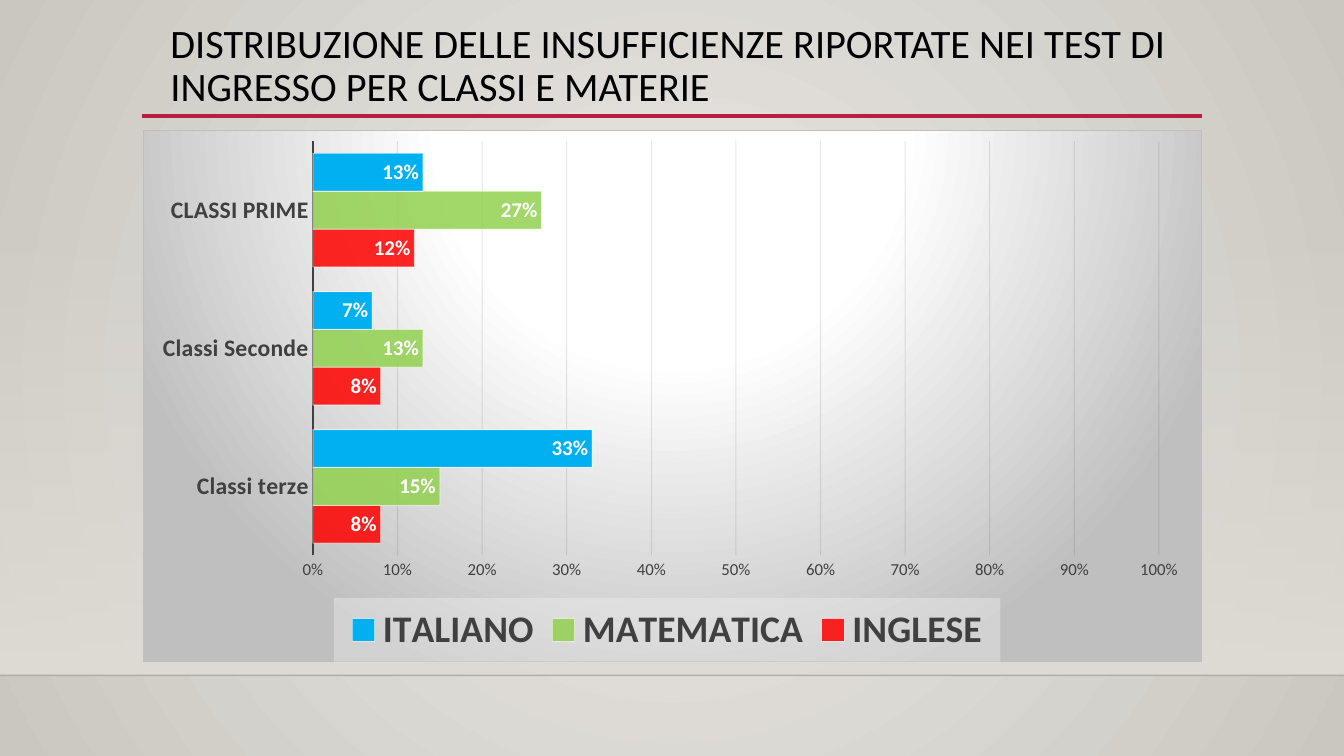
from lxml import etree
from pptx import Presentation
from pptx.chart.data import CategoryChartData
from pptx.dml.color import RGBColor
from pptx.enum.chart import (XL_CHART_TYPE, XL_LABEL_POSITION,
                             XL_LEGEND_POSITION, XL_TICK_MARK)
from pptx.enum.shapes import MSO_CONNECTOR, MSO_SHAPE
from pptx.enum.text import MSO_ANCHOR, MSO_AUTO_SIZE, PP_ALIGN
from pptx.oxml import parse_xml
from pptx.oxml.ns import nsdecls, qn
from pptx.util import Inches, Pt

BAR_CLUSTERED = XL_CHART_TYPE.BAR_CLUSTERED
INSIDE_END = XL_LABEL_POSITION.INSIDE_END
LEGEND_BOTTOM = XL_LEGEND_POSITION.BOTTOM
NO_TICK = XL_TICK_MARK.NONE

BLACK = RGBColor(0x00, 0x00, 0x00)
WHITE = RGBColor(0xFF, 0xFF, 0xFF)
CRIMSON = RGBColor(0xB7, 0x1E, 0x42)
DARK_GRAY = RGBColor(0x40, 0x40, 0x40)
GRID = RGBColor(0x0D, 0x0D, 0x0D)
SILVER = RGBColor(0xBF, 0xBF, 0xBF)
PALE_GRAY = RGBColor(0xF2, 0xF2, 0xF2)
BG_LIGHT = RGBColor(0xEC, 0xEA, 0xE7)
BG_DARK = RGBColor(0xCA, 0xC7, 0xC1)
SAND = RGBColor(0xDF, 0xDB, 0xD5)
RED = RGBColor(0xFF, 0x00, 0x00)
GREEN = RGBColor(0x92, 0xD0, 0x50)
BLUE = RGBColor(0x00, 0xB0, 0xF0)

FONT = "Calibri"
TITLE = ("DISTRIBUZIONE DELLE INSUFFICIENZE RIPORTATE NEI TEST DI "
         "INGRESSO PER CLASSI E MATERIE")
CLASSES = ["Classi terze", "Classi Seconde", "CLASSI PRIME"]
SUBJECTS = [  # name, shares by class, colour, opacity
    ("INGLESE", (0.08, 0.08, 0.12), RED, 85),
    ("MATEMATICA", (0.15, 0.13, 0.27), GREEN, 85),
    ("ITALIANO", (0.33, 0.07, 0.13), BLUE, 100),
]


def style_font(font, size, color, bold=False):
    values = {"name": FONT, "size": Pt(size), "bold": bold}
    for name, value in values.items():
        setattr(font, name, value)
    font.color.rgb = color


def set_alpha(fill_parent, percent):
    """Set the opacity of the solid fill found under an element."""
    color = fill_parent.find(".//" + qn("a:srgbClr"))
    etree.SubElement(color, qn("a:alpha"), val=str(percent * 1000))


def style_line(line, color, width, alpha=100):
    line.color.rgb = color
    line.width = Pt(width)
    if alpha < 100:
        set_alpha(line._get_or_add_ln(), alpha)


def gradient(stops, shade):
    """Build a gradient fill from (position, colour, opacity) stops."""
    marks = "".join(
        f'<a:gs pos="{pos * 1000}"><a:srgbClr val="{color}">'
        f'<a:alpha val="{alpha * 1000}"/></a:srgbClr></a:gs>'
        for pos, color, alpha in stops)
    return (f'<a:gradFill {nsdecls("a")} rotWithShape="1">'
            f'<a:gsLst>{marks}</a:gsLst>{shade}</a:gradFill>')


def circle(top, bottom):
    return (f'<a:path path="circle"><a:fillToRect l="50000" t="{top * 1000}" '
            f'r="50000" b="{bottom * 1000}"/></a:path>')


def set_background(s):
    fill = gradient([(0, BG_LIGHT, 100), (100, BG_DARK, 100)], circle(50, 50))
    bg = parse_xml(f'<p:bg {nsdecls("p", "a")}><p:bgPr>{fill}'
                   '<a:effectLst/></p:bgPr></p:bg>')
    s._element.cSld.insert(0, bg)


def add_floor(s):
    sp = s.shapes.add_shape(MSO_SHAPE.RECTANGLE, 0, Inches(2.21),
                            Inches(13.33), Inches(4.49))
    sp.shadow.inherit = False
    sp.line.fill.background()
    fill = gradient([(0, SAND, 0), (100, SAND, 100)],
                    '<a:lin ang="5400000" scaled="0"/>')
    sp._element.spPr.find(qn("a:prstGeom")).addnext(parse_xml(fill))


def add_rule(s, left, right, y, color, width, alpha=100):
    rule = s.shapes.add_connector(MSO_CONNECTOR.STRAIGHT, Inches(left),
                                  Inches(y), Inches(right), Inches(y))
    style_line(rule.line, color, width, alpha)
    etree.SubElement(rule._element.spPr, qn("a:effectLst"))


def set_title(s):
    title = s.shapes.title
    box = {"left": 1.59, "top": 0.18, "width": 10.76, "height": 0.64}
    for name, value in box.items():
        setattr(title, name, Inches(value))
    tf = title.text_frame
    tf.text = TITLE
    tf.word_wrap = True
    tf.auto_size = MSO_AUTO_SIZE.NONE
    tf.vertical_anchor = MSO_ANCHOR.TOP
    p = tf.paragraphs[0]
    p.alignment = PP_ALIGN.LEFT
    p.line_spacing = 0.9
    style_font(p.runs[0].font, 28.8, BLACK)


def manual_layout(x, y, w, h, inner=False):
    target = '<c:layoutTarget val="inner"/>' if inner else ""
    sizes = "".join(f'<c:{name} val="{value}"/>' for name, value in
                    (("x", x), ("y", y), ("w", w), ("h", h)))
    return parse_xml(f'<c:layout {nsdecls("c")}><c:manualLayout>{target}'
                     '<c:xMode val="edge"/><c:yMode val="edge"/>'
                     f'{sizes}</c:manualLayout></c:layout>')


def style_axes(chart):
    classes, shares = chart.category_axis, chart.value_axis
    for axis in (classes, shares):
        axis.major_tick_mark = axis.minor_tick_mark = NO_TICK
    style_font(classes.tick_labels.font, 16.9, DARK_GRAY, True)
    style_line(classes.format.line, DARK_GRAY, 1.5)
    style_font(shares.tick_labels.font, 12, DARK_GRAY)
    shares.format.line.fill.background()
    shares.minimum_scale, shares.maximum_scale = 0, 1
    shares.major_unit = 0.1
    shares.tick_labels.number_format = "0%"
    shares.tick_labels.number_format_is_linked = False
    style_line(shares.major_gridlines.format.line, GRID, 0.75, 10)


def style_series(series, color, alpha):
    fill = series.format.fill
    fill.solid()
    fill.fore_color.rgb = color
    if alpha < 100:
        set_alpha(series._element.spPr, alpha)
    style_line(series.format.line, WHITE, 0.75, 50)
    labels = series.data_labels
    values = {"show_value": True, "position": INSIDE_END,
              "number_format": "0%", "number_format_is_linked": False}
    for name, value in values.items():
        setattr(labels, name, value)
    style_font(labels.font, 15, WHITE, True)


def style_legend(chart):
    chart.has_legend = True
    legend = chart.legend
    legend.position = LEGEND_BOTTOM
    legend.include_in_layout = False
    style_font(legend.font, 26.9, DARK_GRAY, True)
    element = legend._element
    for old in element.findall(qn("c:layout")):
        element.remove(old)
    element.find(qn("c:legendPos")).addnext(
        manual_layout(0.18, 0.88, 0.63, 0.12))
    element.find(qn("c:txPr")).addprevious(parse_xml(
        f'<c:spPr {nsdecls("c", "a")}><a:solidFill><a:srgbClr '
        f'val="{PALE_GRAY}"><a:alpha val="39000"/></a:srgbClr>'
        '</a:solidFill><a:ln><a:noFill/></a:ln></c:spPr>'))


def style_chart_area(chart):
    plot_area = chart._chartSpace.chart.plotArea
    for old in plot_area.findall(qn("c:layout")):
        plot_area.remove(old)
    plot_area.insert(0, manual_layout(0.16, 0.02, 0.8, 0.78, inner=True))
    fill = gradient([(0, WHITE, 100), (39, WHITE, 100), (100, SILVER, 100)],
                    circle(-80, 180))
    chart._chartSpace.chart.addnext(parse_xml(
        f'<c:spPr {nsdecls("c", "a")}>{fill}<a:ln w="{Pt(0.75)}"><a:solidFill>'
        f'<a:srgbClr val="{SILVER}"/></a:solidFill></a:ln></c:spPr>'))


def add_results_chart(s):
    data = CategoryChartData(number_format="0%")
    data.categories = CLASSES
    for name, shares, _, _ in SUBJECTS:
        data.add_series(name, shares)
    chart = s.shapes.add_chart(BAR_CLUSTERED, Inches(1.42), Inches(1.29),
                               Inches(10.5), Inches(5.28), data).chart
    chart.has_title = False
    style_font(chart.font, 10, BLACK)
    plot = chart.plots[0]
    plot.gap_width = 65
    plot.vary_by_categories = False
    for series, (_, _, color, alpha) in zip(plot.series, SUBJECTS):
        style_series(series, color, alpha)
    style_axes(chart)
    style_legend(chart)
    style_chart_area(chart)


def main():
    prs = Presentation()
    prs.slide_width, prs.slide_height = Inches(13.33), Inches(7.5)
    s = prs.slides.add_slide(prs.slide_layouts[5])
    set_background(s)
    add_floor(s)
    add_rule(s, 0, 13.33, 6.7, BLACK, 1, 20)
    add_rule(s, 1.41, 11.92, 1.15, CRIMSON, 2.5)
    set_title(s)
    add_results_chart(s)
    prs.save("out.pptx")


if __name__ == "__main__":
    main()
